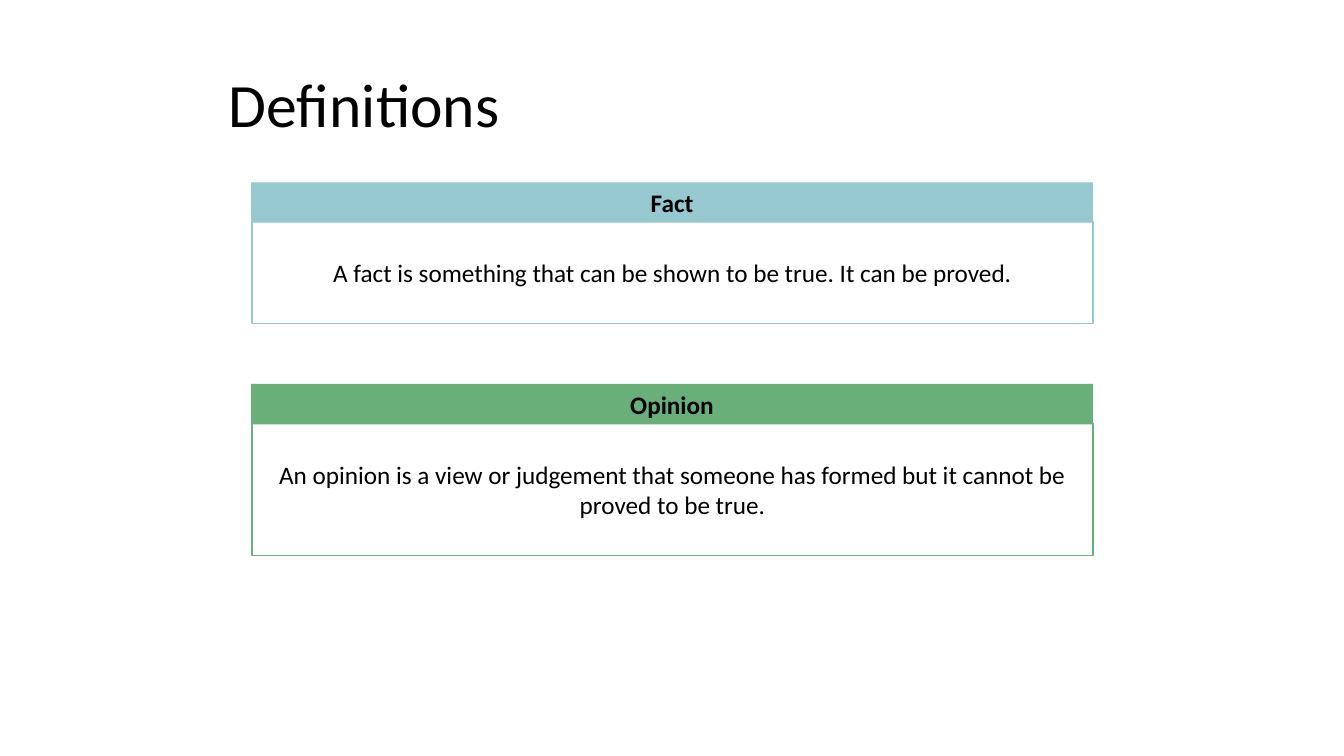
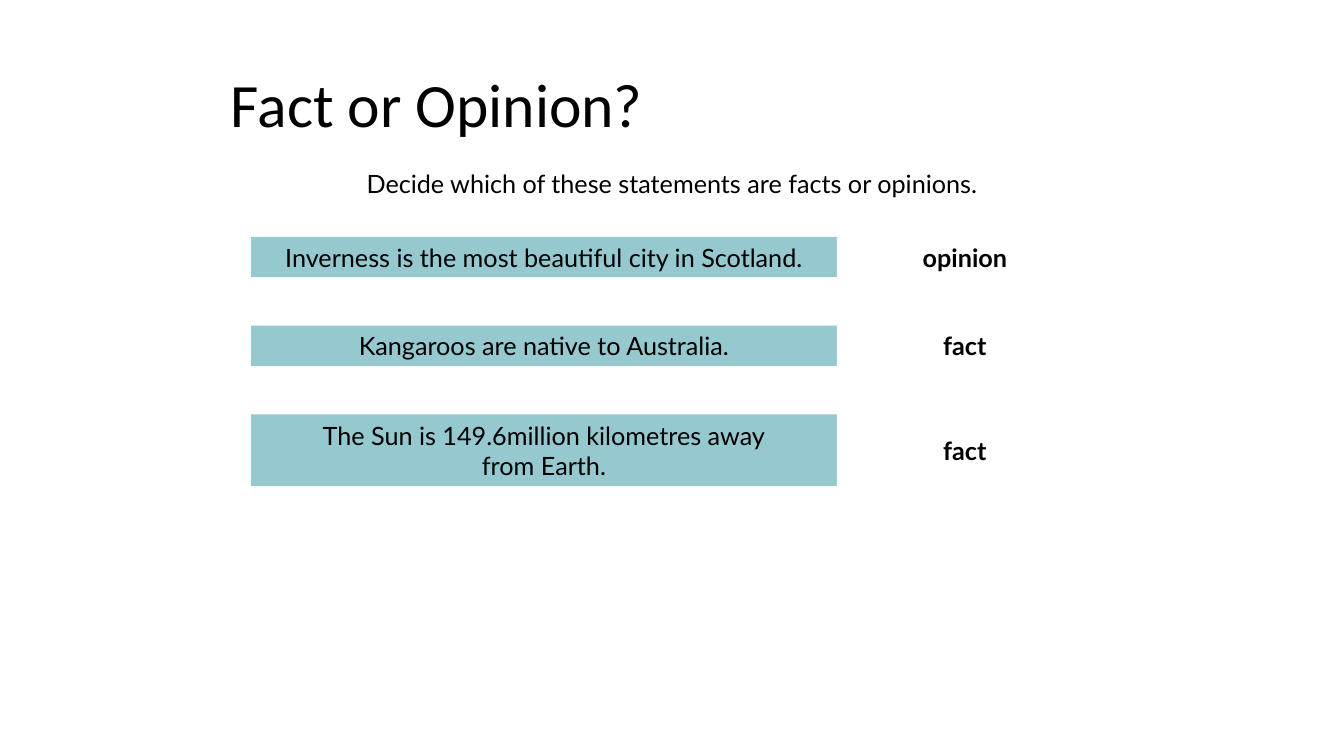
from pptx import Presentation
from pptx.dml.color import RGBColor
from pptx.enum.shapes import MSO_SHAPE
from pptx.enum.text import MSO_ANCHOR, PP_ALIGN
from pptx.util import Inches, Pt

COLORS = {"blue": "95C8CF", "green": "69AF7A", "white": "FFFFFF", "text": "000000"}
HEAD_FONT, QUIZ_FONT = "Calibri", "Lato"

# term, meaning, color, top, height of the meaning box
TERMS = [
    ("Fact", "A fact is something that can be shown to be true. It can be proved.",
     "blue", 1.81, 1.01),
    ("Opinion", "An opinion is a view or judgement that someone has formed "
     "but it cannot be proved to be true.", "green", 3.81, 1.31),
]
TASK = "Decide which of these statements are facts or opinions."
# statement, answer, row height
QUIZ = [
    ("Inverness is the most beautiful city in Scotland.", "opinion", 0.4),
    ("Kangaroos are native to Australia.", "fact", 0.4),
    ("The Sun is 149.6million kilometres away\nfrom Earth.", "fact", 0.71),
]
LEFT, WIDTH = 2.49, 8.35
BAR = 0.4
SAYS = 5.81
QUIZ_TOP, GAP = 2.35, 0.48


def color(name):
    return RGBColor.from_string(COLORS[name])


def style(frame, font, size=18, bold=False, align=PP_ALIGN.CENTER):
    frame.word_wrap = True
    frame.vertical_anchor = MSO_ANCHOR.MIDDLE
    for para in frame.paragraphs:
        para.alignment = align
        for run in para.runs:
            run.font.name = font
            run.font.size = Pt(size)
            run.font.bold = bold
            run.font.color.rgb = color("text")


def add_slide(deck, title, left):
    slide = deck.slides.add_slide(deck.slide_layouts[5])
    head = slide.shapes.title
    head.left, head.top = Inches(left), Inches(0.52)
    head.width, head.height = Inches(8.99), Inches(1.09)
    head.text_frame.text = title
    style(head.text_frame, HEAD_FONT, 44, align=PP_ALIGN.LEFT)
    head.text_frame.paragraphs[0].line_spacing = 0.9
    return slide


def add_box(slide, area, text, font, fill=None, line=None, bold=False):
    box = slide.shapes.add_shape(MSO_SHAPE.RECTANGLE, *map(Inches, area))
    box.shadow.inherit = False
    if fill:
        box.fill.solid()
        box.fill.fore_color.rgb = color(fill)
    else:
        box.fill.background()
    if line:
        box.line.color.rgb = color(line)
        box.line.width = Pt(1)
    else:
        box.line.fill.background()
    box.text_frame.text = text
    style(box.text_frame, font, bold=bold)


def add_terms(deck):
    slide = add_slide(deck, "Definitions", 2.17)
    for term, meaning, hue, top, height in TERMS:
        add_box(slide, (LEFT, top, WIDTH, BAR), term, HEAD_FONT, fill=hue, bold=True)
        add_box(slide, (LEFT + 0.01, top + 0.39, WIDTH - 0.01, height), meaning,
                HEAD_FONT, line=hue)


def add_quiz(deck):
    slide = add_slide(deck, "Fact or Opinion?", 2.19)
    task = slide.shapes.add_textbox(*map(Inches, (LEFT, 1.59, WIDTH, 0.46)))
    frame = task.text_frame
    frame.margin_left = frame.margin_right = 0
    frame.margin_top = frame.margin_bottom = Inches(0.08)
    frame.text = TASK
    style(frame, QUIZ_FONT)
    top = QUIZ_TOP
    for says, answer, height in QUIZ:
        add_box(slide, (LEFT, top, SAYS, height), says, QUIZ_FONT, fill="blue")
        add_box(slide, (LEFT + SAYS, top, WIDTH - SAYS, height), answer, QUIZ_FONT,
                fill="white", bold=True)
        top += height + GAP


def main():
    deck = Presentation()
    deck.slide_width, deck.slide_height = Inches(13.33), Inches(7.5)
    add_terms(deck)
    add_quiz(deck)
    deck.save("out.pptx")


if __name__ == "__main__":
    main()
